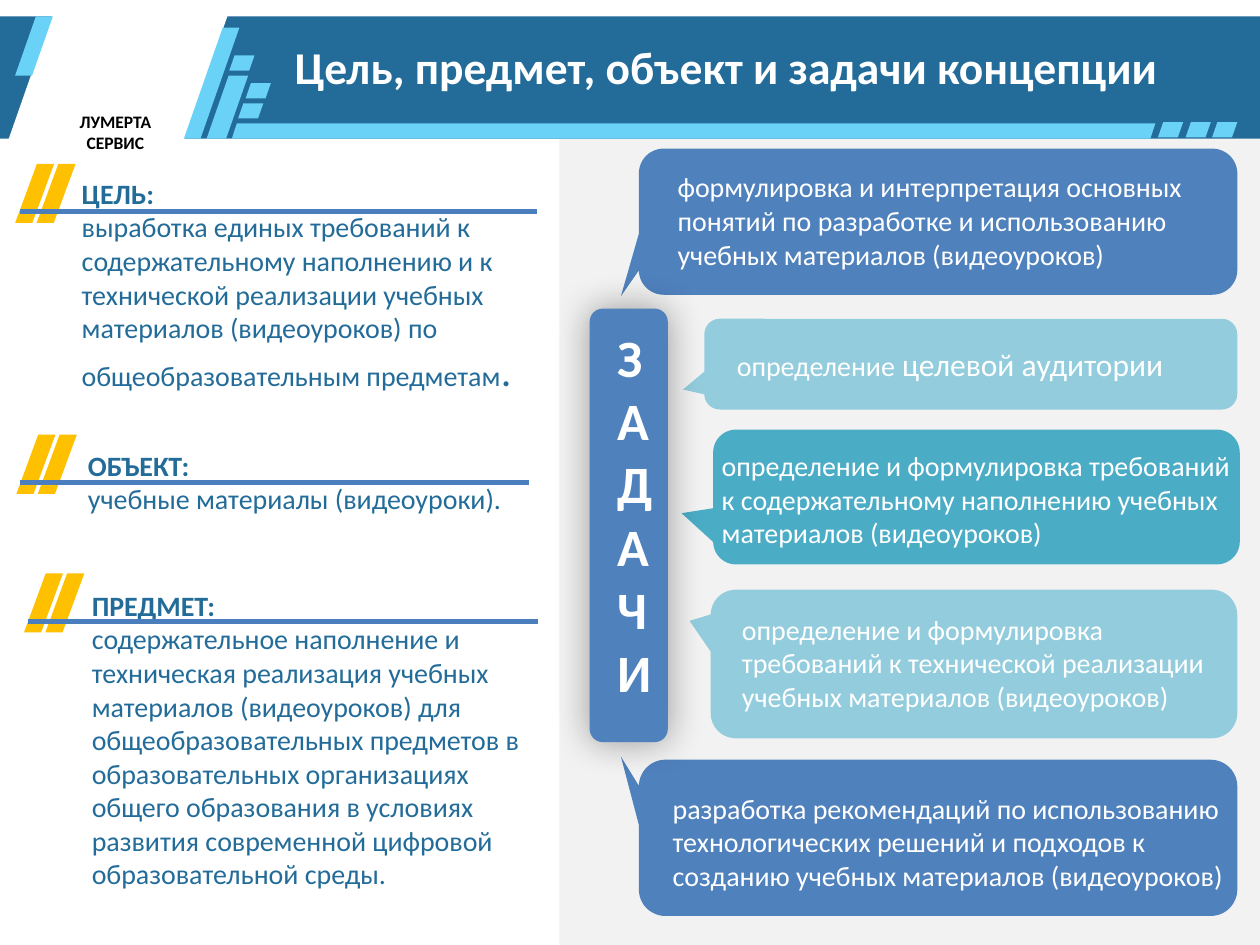
from lxml import etree
from pptx import Presentation
from pptx.dml.color import RGBColor
from pptx.enum.shapes import MSO_CONNECTOR, MSO_SHAPE
from pptx.enum.text import MSO_AUTO_SIZE, PP_ALIGN
from pptx.oxml import parse_xml
from pptx.oxml.ns import nsdecls, qn
from pptx.util import Inches, Pt

RECTANGLE = MSO_SHAPE.RECTANGLE
ROUNDED = MSO_SHAPE.ROUNDED_RECTANGLE
SLANTED = MSO_SHAPE.PARALLELOGRAM
CALLOUT = MSO_SHAPE.ROUNDED_RECTANGULAR_CALLOUT
STRAIGHT = MSO_CONNECTOR.STRAIGHT
FIT_SHAPE = MSO_AUTO_SIZE.SHAPE_TO_FIT_TEXT
LEFT, CENTER = PP_ALIGN.LEFT, PP_ALIGN.CENTER

FONT = "Calibri"
WHITE, BLACK, GRAY = "FFFFFF", "000000", "F2F2F2"
NAVY, SKY, YELLOW = "236C99", "69D2F6", "FFC000"
BLUE, PALE, TEAL, RULE = "4F81BD", "93CDDD", "4BACC6", "4B7EBC"

HEADER_SLANTS = [
    ((0.12, 0.13, 0.3, 0.47), 0.55),
    ((1.46, 0.22, 0.44, 0.88), 0.7),
    ((1.64, 0.6, 0.33, 0.5), 0.53),
    ((1.82, 0.44, 0.2, 0.12), 0.35),
    ((1.89, 0.82, 0.2, 0.12), 0.35),
    ((1.95, 0.66, 0.2, 0.12), 0.35),
]

SECTIONS = [
    {"mark": (0.12, 1.3), "place": (0.55, 1.35, 3.82, 1.85), "rule": (0.16, 4.26),
     "heading": "ЦЕЛЬ:",
     "body": [("выработка единых требований к содержательному наполнению и к "
               "технической реализации учебных материалов (видеоуроков) по "
               "общеобразовательным предметам", 16), (".", 24)]},
    {"mark": (0.13, 3.45), "place": (0.6, 3.51, 3.77, 0.64), "rule": (0.16, 4.2),
     "heading": "ОБЪЕКТ:",
     "body": [("учебные материалы (видеоуроки).", 16)]},
    {"mark": (0.19, 4.55), "place": (0.63, 4.62, 3.75, 2.52), "rule": (0.22, 4.27),
     "heading": "ПРЕДМЕТ:",
     "body": [("содержательное наполнение и техническая реализация учебных "
               "материалов (видеоуроков) для общеобразовательных предметов в "
               "образовательных организациях общего образования в условиях "
               "развития современной цифровой образовательной среды.", 16)]},
]

TASKS = [
    {"place": (5.07, 1.18, 4.75, 1.16), "tip": (-0.53, 0.51), "color": BLUE,
     "text_place": (5.28, 1.3, 4.6, 0.91),
     "spans": [("формулировка и интерпретация основных понятий по разработке и "
                "использованию учебных материалов (видеоуроков)", 16)]},
    {"place": (5.59, 2.53, 4.23, 0.72), "tip": (-0.54, 0.28), "color": PALE,
     "text_place": (5.75, 2.69, 3.63, 0.4), "wrap": False,
     "spans": [("определение", 16), (" целевой аудитории", 18)]},
    {"place": (5.66, 3.41, 4.18, 1.07), "tip": (-0.56, 0.12), "color": TEAL,
     "text_place": (5.63, 3.51, 4.3, 0.91),
     "spans": [("определение и формулировка требований к содержательному "
                "наполнению учебных материалов (видеоуроков)", 16)]},
    {"place": (5.64, 4.68, 4.18, 1.18), "tip": (-0.54, -0.29), "color": PALE,
     "text_place": (5.79, 4.81, 4.19, 0.91),
     "spans": [("определение и формулировка требований к технической реализации "
                "учебных материалов (видеоуроков)", 16)]},
    {"place": (5.07, 6.03, 4.75, 1.24), "tip": (-0.53, -0.52), "color": BLUE,
     "text_place": (5.24, 6.23, 4.85, 0.91),
     "spans": [("разработка рекомендаций по использованию технологических решений "
                "и подходов к созданию учебных материалов (видеоуроков)", 16)]},
]


def paint(fill, color):
    """Make a fill solid in a hex colour."""
    fill.solid()
    fill.fore_color.rgb = RGBColor.from_string(color)


def finish_shape(shape, color):
    """Give a shape a flat fill with no outline or shadow."""
    shape.shadow.inherit = False
    paint(shape.fill, color)
    shape.line.fill.background()


def add_block(page, kind, place, color, adjustments=()):
    """Add a flat preset shape."""
    shape = page.shapes.add_shape(kind, *map(Inches, place))
    for index, value in enumerate(adjustments):
        shape.adjustments[index] = value
    finish_shape(shape, color)
    return shape


def add_span(para, text, size=16, color=WHITE, bold=False):
    """Append formatted text to a paragraph."""
    span = para.add_run()
    span.text = text
    span.font.name = FONT
    span.font.size = Pt(size)
    span.font.bold = bold
    span.font.color.rgb = RGBColor.from_string(color)


def add_text(page, place, paragraphs, align=LEFT, wrap=True, **style):
    """Add a text box of paragraphs, each a list of (text, size, bold) spans."""
    box = page.shapes.add_textbox(*map(Inches, place))
    frame = box.text_frame
    frame.word_wrap = wrap
    frame.auto_size = FIT_SHAPE
    for index, spans in enumerate(paragraphs):
        para = frame.add_paragraph() if index else frame.paragraphs[0]
        para.alignment = align
        for text, size, bold in spans:
            add_span(para, text, size=size, bold=bold, **style)


def add_rule(page, left, right, top):
    """Add a horizontal line."""
    rule = page.shapes.add_connector(
        STRAIGHT, Inches(left), Inches(top), Inches(right), Inches(top))
    paint(rule.line.fill, RULE)
    rule.line.width = Pt(3)
    etree.SubElement(rule.element.spPr, qn("a:effectLst"))


def add_glow(shape):
    """Give a shape a soft centred shadow."""
    properties = shape.element.spPr
    properties.remove(properties.find(qn("a:effectLst")))
    properties.append(parse_xml(
        f'<a:effectLst {nsdecls("a")}>'
        f'<a:outerShdw blurRad="{Pt(21)}" dist="0" dir="5400000" rotWithShape="0">'
        f'<a:srgbClr val="{BLACK}"><a:alpha val="37000"/></a:srgbClr>'
        '</a:outerShdw></a:effectLst>'))


def add_header(page):
    """Draw the title band with its slanted accents."""
    add_block(page, RECTANGLE, (0, 0.13, 10, 0.97), NAVY)
    add_block(page, SLANTED, (0, 0, 1.85, 1.3), WHITE, [0.35])
    add_text(page, (0.29, 0.83, 1.25, 0.27), [[("ЛУМЕРТА СЕРВИС", 10, True)]],
             align=CENTER, wrap=False, color=BLACK)
    for place, slant in HEADER_SLANTS:
        add_block(page, SLANTED, place, SKY, [slant])
    outline = page.shapes.build_freeform(Inches(1.88), Inches(0.98))
    corners = [(9.17, 0.98), (9.13, 1.1), (1.84, 1.1)]
    outline.add_line_segments([(Inches(x), Inches(y)) for x, y in corners])
    finish_shape(outline.convert_to_shape(), SKY)
    for left in (9.19, 9.41, 9.62):
        add_block(page, SLANTED, (left, 0.97, 0.2, 0.12), SKY, [0.35])
    add_text(page, (2.24, 0.26, 7.17, 0.54),
             [[("Цель, предмет, объект и задачи концепции", 26, True)]], color=WHITE)


def add_section(page, mark, place, rule, heading, body):
    """Draw a headed text with a double slash and a line under the heading."""
    left, top = mark
    for offset in (0.17, 0):
        add_block(page, SLANTED, (left + offset, top, 0.31, 0.47), YELLOW, [0.56])
    spans = [(text, size, False) for text, size in body]
    add_text(page, place, [[(heading, 16, True)], spans], color=NAVY)
    add_rule(page, *rule, top + 0.38)


def add_task(page, place, tip, color, text_place, spans, wrap=True):
    """Draw a callout with its task text."""
    add_block(page, CALLOUT, place, color, [*tip, 0.17])
    add_text(page, text_place, [[(text, size, False) for text, size in spans]],
             wrap=wrap, color=WHITE)


def add_pillar(page):
    """Draw the vertical heading of the tasks."""
    add_glow(add_block(page, ROUNDED, (4.68, 2.45, 0.62, 3.44), BLUE))
    add_text(page, (4.8, 2.53, 0.39, 3.13),
             [[(letter, 30, True)] for letter in "ЗАДАЧИ"], align=CENTER, color=WHITE)


def main():
    """Build the slide and save the deck."""
    deck = Presentation()
    deck.slide_width, deck.slide_height = Inches(10), Inches(7.5)
    page = deck.slides.add_slide(deck.slide_layouts[6])
    add_block(page, RECTANGLE, (4.44, 0.84, 5.6, 6.66), GRAY)
    add_header(page)
    for section in SECTIONS:
        add_section(page, **section)
    for task in TASKS:
        add_task(page, **task)
    add_pillar(page)
    deck.save("out.pptx")


if __name__ == "__main__":
    main()
